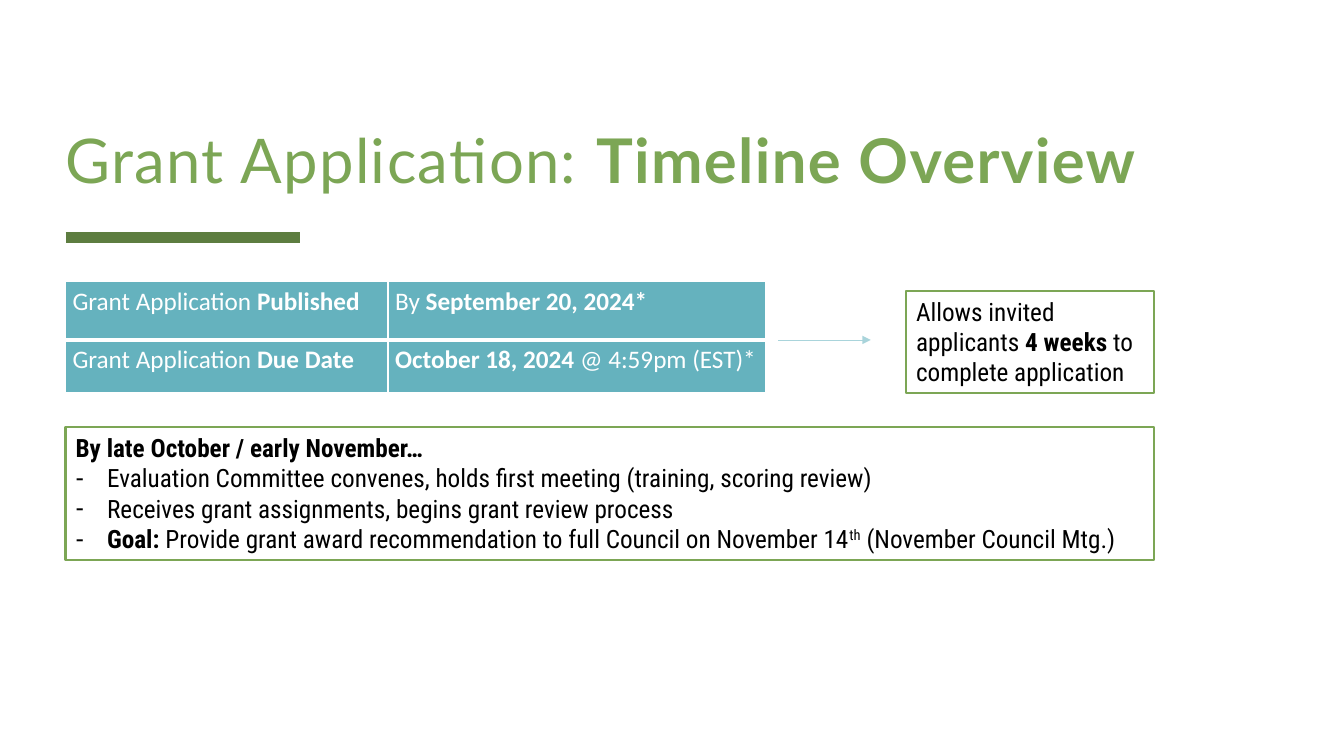
from lxml import etree
from pptx import Presentation
from pptx.dml.color import RGBColor
from pptx.enum.shapes import MSO_CONNECTOR as CONNECTOR, MSO_SHAPE as SHAPE
from pptx.enum.text import MSO_ANCHOR as ANCHOR, MSO_AUTO_SIZE as AUTO_SIZE, PP_ALIGN as ALIGN
from pptx.oxml.ns import qn
from pptx.util import Pt

COLORS = {"green": "7CA655", "dark_green": "5D7D40", "teal": "65B2BE",
          "pale_teal": "A9D4DB", "white": "FFFFFF", "black": "000000"}
LEFT = 46.8
BULLET_INDENT = 22.5

# Each run is (text, style); style is "", "bold" or "super".
TITLE = [("Grant Application: ", ""), ("Timeline Overview", "bold")]
DATES = [
    [[("Grant Application ", ""), ("Published", "bold")],
     [("By", ""), (" September 20, 2024*", "bold")]],
    [[("Grant Application ", ""), ("Due Date", "bold")],
     [("October 18, 2024 ", "bold"), ("@ 4:59pm (EST)*", "")]],
]
WINDOW = [("Allows invited applicants ", ""), ("4 weeks", "bold"),
          (" to complete application", "")]
NEXT_HEADING = [("By late October / early November…", "bold")]
NEXT_STEPS = [
    [("Evaluation Committee convenes, holds first meeting (training, scoring review)", "")],
    [("Receives grant assignments, begins grant review process", "")],
    [("Goal: ", "bold"),
     ("Provide grant award recommendation to full Council on November 14", ""),
     ("th", "super"), (" (November Council Mtg.)", "")],
]


def color(name):
    return RGBColor.from_string(COLORS[name])


def write(paragraph, runs, font, size, ink):
    paragraph.alignment = ALIGN.LEFT
    paragraph.font.name = font
    paragraph.font.size = Pt(size)
    paragraph.font.color.rgb = color(ink)
    for text, style in runs:
        run = paragraph.add_run()
        run.text = text
        run.font.name = font
        run.font.size = Pt(size)
        run.font.color.rgb = color(ink)
        run.font.bold = style == "bold"
        if style == "super":
            run.font._element.set("baseline", "30000")


def place(shape, box):
    shape.left, shape.top, shape.width, shape.height = (Pt(v) for v in box)


def set_bullet(paragraph, mark):
    """Give the paragraph a hanging mark, or no bullet when mark is None."""
    indent = BULLET_INDENT if mark else 0
    props = paragraph._p.get_or_add_pPr()
    props.set("marL", str(Pt(indent)))
    props.set("indent", str(-Pt(indent)))
    if mark:
        etree.SubElement(props, qn("a:buChar"), char=mark)
    else:
        etree.SubElement(props, qn("a:buNone"))


def outline_box(shape):
    shape.fill.background()
    shape.line.color.rgb = color("green")
    shape.line.width = Pt(1.5)
    frame = shape.text_frame
    frame.word_wrap = True
    frame.auto_size = AUTO_SIZE.NONE
    frame.vertical_anchor = ANCHOR.TOP
    return frame


def add_rule(slide, x1, x2, y, ink, width, arrow=False):
    rule = slide.shapes.add_connector(CONNECTOR.STRAIGHT, Pt(x1), Pt(y), Pt(x2), Pt(y))
    rule.line.color.rgb = color(ink)
    rule.line.width = Pt(width)
    if arrow:
        etree.SubElement(rule.line._get_or_add_ln(), qn("a:tailEnd"), type="triangle")
    etree.SubElement(rule._element.spPr, qn("a:effectLst"))


def add_title(slide, box):
    title = slide.shapes.title
    place(title, box)
    frame = title.text_frame
    frame.margin_left = frame.margin_right = frame.margin_top = frame.margin_bottom = 0
    frame.word_wrap = True
    frame.auto_size = AUTO_SIZE.NONE
    frame.vertical_anchor = ANCHOR.BOTTOM
    heading = frame.paragraphs[0]
    heading.line_spacing = 0.8
    write(heading, TITLE, "Lato", 44, "green")
    for run in heading.runs:
        run.font._element.set("spc", "100")


def set_borders(cell, widths):
    """Draw white borders; they must precede the cell's fill in the XML."""
    props = cell._tc.get_or_add_tcPr()
    for side, width in widths.items():
        edge = etree.SubElement(props, qn(f"a:ln{side}"), w=str(Pt(width)))
        fill = etree.SubElement(edge, qn("a:solidFill"))
        etree.SubElement(fill, qn("a:srgbClr"), val=COLORS["white"])


def add_dates(slide, box, columns, rows):
    dates = slide.shapes.add_table(len(rows), len(columns), *(Pt(v) for v in box)).table
    for column, width in zip(dates.columns, columns):
        column.width = Pt(width)
    for r, height in enumerate(rows):
        dates.rows[r].height = Pt(height)
        for c, runs in enumerate(DATES[r]):
            cell = dates.cell(r, c)
            cell.margin_left = cell.margin_right = Pt(5)
            cell.margin_top = cell.margin_bottom = 0
            set_borders(cell, {"L": 1, "R": 1, "T": 3 if r else 1, "B": 1 if r else 3})
            cell.fill.solid()
            cell.fill.fore_color.rgb = color("teal")
            entry = cell.text_frame.paragraphs[0]
            entry.line_spacing = 1.15
            write(entry, runs, "Calibri", 18, "white")


def add_window(slide, box):
    window = slide.shapes.add_shape(SHAPE.RECTANGLE, *(Pt(v) for v in box))
    window.shadow.inherit = False
    frame = outline_box(window)
    write(frame.paragraphs[0], WINDOW, "Roboto Condensed", 18, "black")


def add_next_steps(slide, box):
    steps = slide.placeholders[1]
    place(steps, box)
    frame = outline_box(steps)
    for i, runs in enumerate([NEXT_HEADING] + NEXT_STEPS):
        step = frame.add_paragraph() if i else frame.paragraphs[0]
        set_bullet(step, "-" if i else None)
        step.space_before = Pt(0)
        write(step, runs, "Roboto Condensed", 18, "black")


def main():
    deck = Presentation()
    deck.slide_width, deck.slide_height = Pt(960), Pt(540)
    slide = deck.slides.add_slide(deck.slide_layouts[1])
    add_rule(slide, LEFT, 214.6, 169.5, "dark_green", 8)
    add_title(slide, (LEFT, 15.8, 864, 123.8))
    add_dates(slide, (LEFT, 201, 500.4, 79.5), columns=(230.4, 270), rows=(42, 37.5))
    add_rule(slide, 556, 622, 242.8, "pale_teal", 0.5, arrow=True)
    add_window(slide, (647.3, 208, 177.1, 72.7))
    add_next_steps(slide, (LEFT, 305.3, 777.6, 94.5))
    deck.save("out.pptx")


if __name__ == "__main__":
    main()
